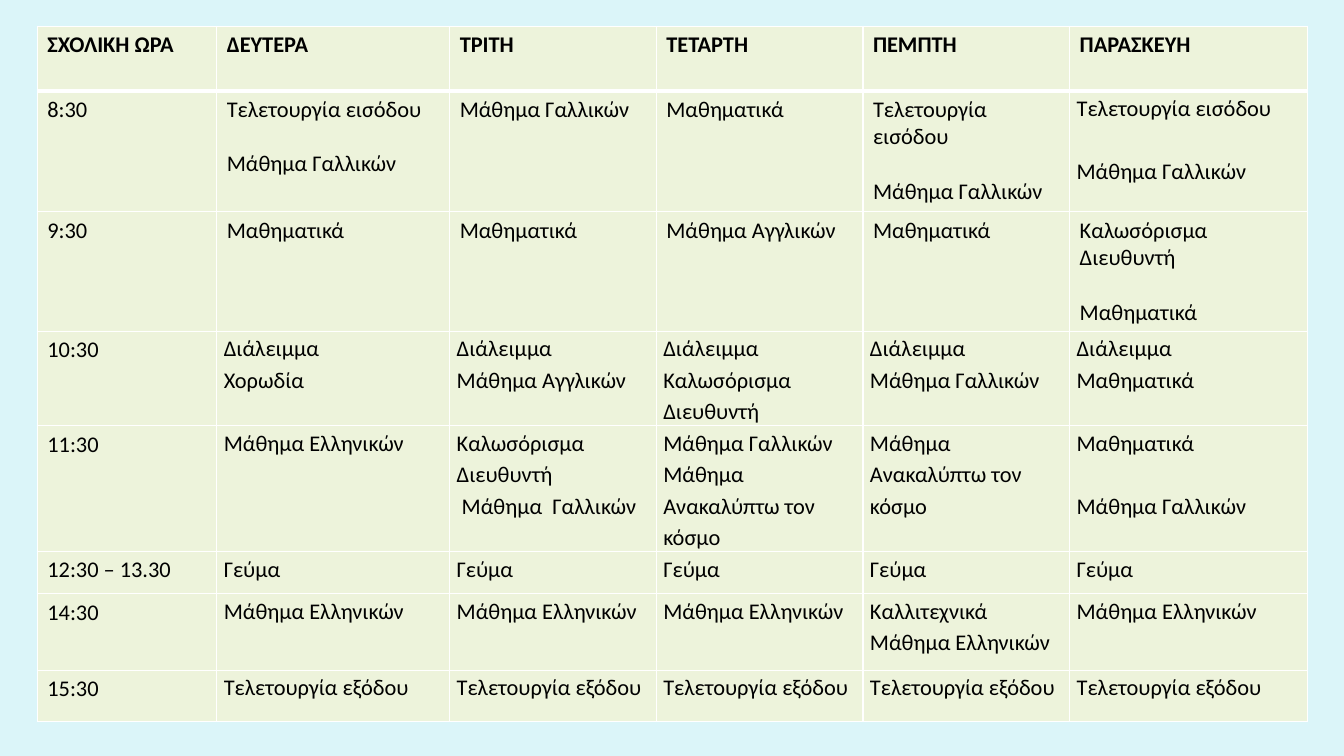
from dataclasses import dataclass

from lxml import etree
from pptx import Presentation
from pptx import util as u
from pptx.dml.color import RGBColor
from pptx.oxml.ns import qn

SKY = RGBColor(0xDB, 0xF5, 0xF9)
PALE_GREEN = RGBColor(0xED, 0xF3, 0xDB)
WHITE = RGBColor(0xFF, 0xFF, 0xFF)
BLACK = RGBColor(0x00, 0x00, 0x00)

COLUMN_WIDTHS = (1.78, 2.31, 2.05, 2.05, 2.05, 2.36)
ROW_HEIGHTS = (0.64, 1.2, 0.98, 0.76, 1.01, 0.42, 0.76, 0.51)


@dataclass(frozen=True)
class Entry:
    """Activities of one cell; a spaced entry has a line's gap between them."""
    activities: tuple[str, ...]
    spaced: bool = False
    loose: bool = False  # wider line spacing and narrow margins


def entry(*activities: str, spaced: bool = False) -> Entry:
    return Entry(activities, spaced)


def loose(*activities: str, spaced: bool = False) -> Entry:
    return Entry(activities, spaced, loose=True)


# Lessons that recur through the week
ENTRANCE = "Τελετουργία εισόδου"
EXIT = "Τελετουργία εξόδου"
FRENCH = "Μάθημα Γαλλικών"
ENGLISH = "Μάθημα Αγγλικών"
GREEK = "Μάθημα Ελληνικών"
MATHS = "Μαθηματικά"
WELCOME = "Καλωσόρισμα Διευθυντή"
BREAK = "Διάλειμμα"
LUNCH = "Γεύμα"

DAYS = ("ΔΕΥΤΕΡΑ", "ΤΡΙΤΗ", "ΤΕΤΑΡΤΗ", "ΠΕΜΠΤΗ", "ΠΑΡΑΣΚΕΥΗ")
TIMETABLE: dict[str, list[Entry]] = {
    "ΣΧΟΛΙΚΗ ΩΡΑ": [entry(day) for day in DAYS],
    "8:30": [
        entry(ENTRANCE, FRENCH, spaced=True), entry(FRENCH), entry(MATHS),
        entry(ENTRANCE, FRENCH, spaced=True), loose(ENTRANCE, FRENCH, spaced=True),
    ],
    "9:30": [
        entry(MATHS), entry(MATHS), entry(ENGLISH), entry(MATHS),
        entry(WELCOME, MATHS, spaced=True),
    ],
    "10:30": [loose(BREAK, lesson) for lesson in ("Χορωδία", ENGLISH, WELCOME, FRENCH, MATHS)],
    "11:30": [
        loose(GREEK), loose(WELCOME, " Μάθημα  Γαλλικών"),
        loose(FRENCH, "Μάθημα Ανακαλύπτω τον κόσμο"),
        loose("Μάθημα", "Ανακαλύπτω τον κόσμο"), loose(MATHS, FRENCH, spaced=True),
    ],
    "12:30 – 13.30": [loose(LUNCH)] * len(DAYS),
    "14:30": [loose(GREEK)] * 3 + [loose("Καλλιτεχνικά", GREEK), loose(GREEK)],
    "15:30": [loose(EXIT)] * len(DAYS),
}


def set_borders(cell, top: float, bottom: float) -> None:
    """Draw white borders, with the given top and bottom widths in points."""
    properties = cell._tc.get_or_add_tcPr()
    sides = {"lnL": 1, "lnR": 1, "lnT": top, "lnB": bottom}
    for position, (side, width) in enumerate(sides.items()):
        line = etree.Element(qn(f"a:{side}"), w=str(u.Pt(width)))
        fill = etree.SubElement(line, qn("a:solidFill"))
        etree.SubElement(fill, qn("a:srgbClr"), val=str(WHITE))
        properties.insert(position, line)


def fill_cell(cell, content: Entry, header: bool) -> None:
    cell.fill.solid()
    cell.fill.fore_color.rgb = PALE_GREEN
    if content.loose:
        cell.margin_left = cell.margin_right = u.Inches(0.07)
        cell.margin_top = cell.margin_bottom = 0
    cell.text = "\n".join(content.activities)
    for number, paragraph in enumerate(cell.text_frame.paragraphs):
        font = paragraph.font
        font.name, font.size, font.bold = "Calibri", u.Pt(16), header
        font.color.rgb = BLACK
        if content.loose:
            paragraph.line_spacing = 1.15
        if content.spaced and number:
            paragraph.space_before = u.Pt(22.5 if content.loose else 19.5)


def main() -> None:
    presentation = Presentation()
    presentation.slide_width = u.Inches(13.33)
    presentation.slide_height = u.Inches(7.5)
    slide = presentation.slides.add_slide(presentation.slide_layouts[6])
    slide.background.fill.solid()
    slide.background.fill.fore_color.rgb = SKY

    # Weekly timetable
    timetable = slide.shapes.add_table(
        len(ROW_HEIGHTS), len(COLUMN_WIDTHS),
        u.Inches(0.37), u.Inches(0.26), u.Inches(12.59), u.Inches(6.85),
    ).table
    for column, width in zip(timetable.columns, COLUMN_WIDTHS):
        column.width = u.Inches(width)
    for row, height in zip(timetable.rows, ROW_HEIGHTS):
        row.height = u.Inches(height)

    # Hours in the first column, days in the others
    for row_number, (hour, lessons) in enumerate(TIMETABLE.items()):
        for column_number, content in enumerate([entry(hour), *lessons]):
            cell = timetable.cell(row_number, column_number)
            fill_cell(cell, content, header=row_number == 0)
            set_borders(cell, top=3 if row_number == 1 else 1, bottom=3 if row_number == 0 else 1)

    presentation.save("out.pptx")


if __name__ == "__main__":
    main()
